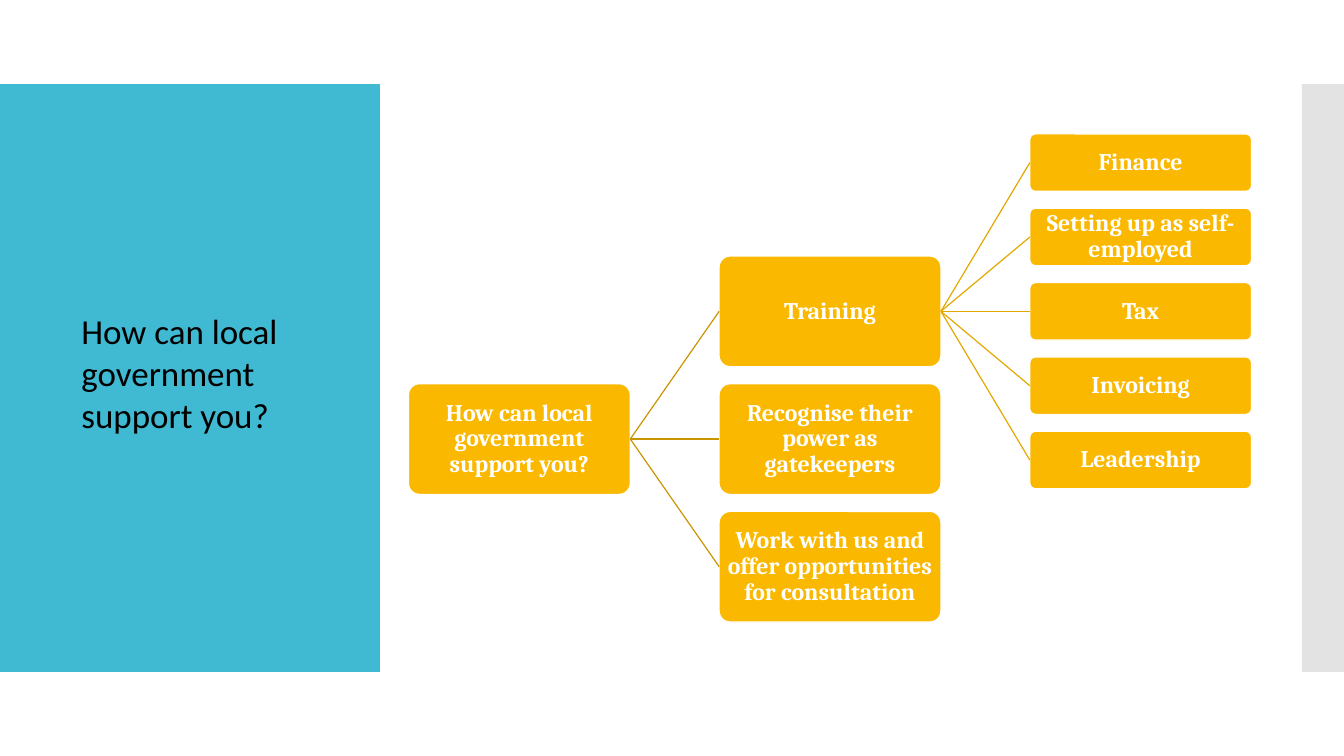
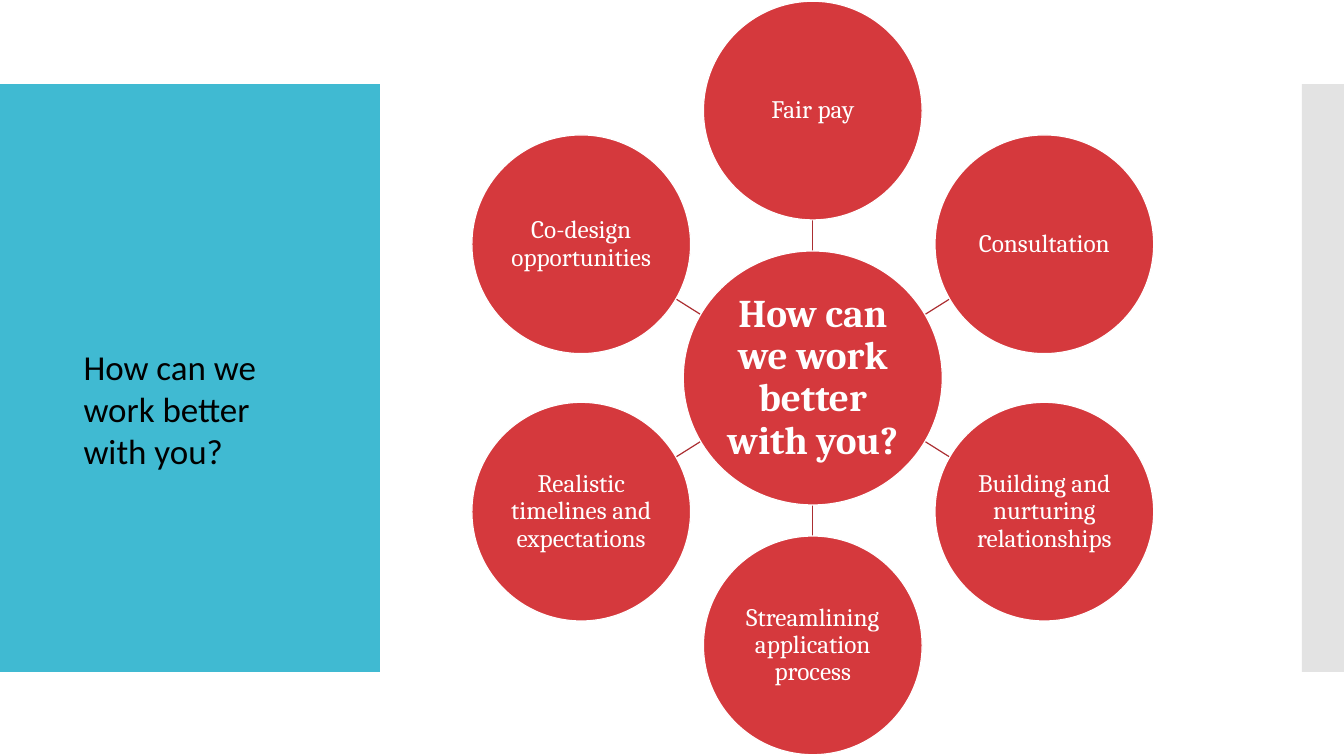
import math
import pptx
import pptx.util
import pptx.dml.color
import pptx.enum.shapes
import pptx.enum.text
import pptx.oxml
import pptx.oxml.ns

Pt = pptx.util.Pt
qn = pptx.oxml.ns.qn
SHAPE = pptx.enum.shapes.MSO_SHAPE
ALIGN = pptx.enum.text.PP_ALIGN
ANCHOR = pptx.enum.text.MSO_ANCHOR
STRAIGHT = pptx.enum.shapes.MSO_CONNECTOR.STRAIGHT

TEAL, GREY, WHITE, BLACK = "40BAD2", "C8C8C8", "FFFFFF", "000000"
GOLD, BROWN, AMBER = "FAB900", "C89400", "E3A800"
RED, WINE = "D5393D", "AB2E31"
EDGE = 0.85


def ink(fill, color):
    fill.solid()
    fill.fore_color.rgb = pptx.dml.color.RGBColor.from_string(color)


def write(frame, text, font="Cambria", size=18, color=WHITE, bold=False,
          align=ALIGN.CENTER, anchor=ANCHOR.MIDDLE, inset=(0.8, 0.8), space=0.9):
    frame.word_wrap = True
    frame.vertical_anchor = anchor
    frame.margin_left = frame.margin_right = Pt(inset[0])
    frame.margin_top = frame.margin_bottom = Pt(inset[1])
    par = frame.paragraphs[0]
    par.alignment = align
    par.line_spacing = space
    run = par.add_run()
    run.text = text
    run.font.name = font
    run.font.size = Pt(size)
    run.font.bold = bold
    ink(run.font.fill, color)


deck = pptx.Presentation()
deck.slide_width = Pt(960)
deck.slide_height = Pt(540)

titles = [
    ("How can local government support you?", 51.1, 217.4, 163.4),
    ("How can we work better with you?", 52.6, 243.4, 158.4),
]
pages = []
for text, left, top, width in titles:
    page = deck.slides.add_slide(deck.slide_layouts[6])
    pages.append(page)
    for x, w, color in [(0, 271.4, TEAL), (930, 30, GREY)]:
        band = page.shapes.add_shape(SHAPE.RECTANGLE, Pt(x), Pt(60), Pt(w), Pt(420))
        band.shadow.inherit = False
        band.line.fill.background()
        ink(band.fill, color)
        if color == GREY:
            tint = band.element.spPr.find(".//" + qn("a:srgbClr"))
            pptx.oxml.ns.qn
            tint.append(pptx.oxml.parse_xml(
                '<a:alpha xmlns:a="http://schemas.openxmlformats.org/drawingml/2006/main" val="50000"/>'))
    title = page.shapes.add_textbox(Pt(left), Pt(top), Pt(width), Pt(98))
    write(title.text_frame, text, font="Calibri", size=25, color=BLACK,
          align=ALIGN.LEFT, anchor=ANCHOR.TOP, inset=(7.2, 3.6), space=1)

tree, wheel = pages
lines = []

levels = [
    (["How can local government support you?"], 313.6, 0, 79),
    (["Training", "Recognise their power as gatekeepers",
      "Work with us and offer opportunities for consultation"], 313.6, 91.2, 79),
    (["Finance", "Setting up as self-employed", "Tax", "Invoicing", "Leadership"],
     222.4, 53.1, 41),
]
parent = None
for level, (texts, mid, step, high) in enumerate(levels):
    row = []
    for i, text in enumerate(texts):
        top = mid + (i - (len(texts) - 1) / 2) * step - high / 2
        box = tree.shapes.add_shape(SHAPE.ROUNDED_RECTANGLE, Pt(291.8 + level * 221.9),
                                    Pt(top), Pt(158.4), Pt(high))
        box.adjustments[0] = 0.1
        box.shadow.inherit = False
        ink(box.fill, GOLD)
        ink(box.line.fill, WHITE)
        box.line.width = Pt(EDGE)
        write(box.text_frame, text, size=17, bold=True)
        row.append(box)
        if parent:
            line = tree.shapes.add_connector(STRAIGHT, 0, 0, 0, 0)
            line.begin_connect(parent, 3)
            line.end_connect(box, 1)
            lines.append((line, BROWN if level == 1 else AMBER))
    parent = row[0]

cx, cy, reach, disc = 580.6, 270, 191, 156.2
hub = (185, 181.4)
discs = [("How can we work better with you?", cx, cy, *hub, 28, True)]
spokes = ["Fair pay", "Consultation", "Building and nurturing relationships",
          "Streamlining application process", "Realistic timelines and expectations",
          "Co-design opportunities"]
for i, text in enumerate(spokes):
    turn = math.tau * i / len(spokes)
    dx, dy = math.sin(turn), -math.cos(turn)
    discs.append((text, cx + reach * dx, cy + reach * dy, disc, disc, 18, False))
    far = reach - disc / 2
    line = wheel.shapes.add_connector(
        STRAIGHT, Pt(cx + hub[0] / 2 * dx), Pt(cy + hub[1] / 2 * dy),
        Pt(cx + far * dx), Pt(cy + far * dy))
    lines.append((line, WINE))

for text, x, y, w, h, size, bold in discs:
    ball = wheel.shapes.add_shape(SHAPE.OVAL, Pt(x - w / 2), Pt(y - h / 2), Pt(w), Pt(h))
    ball.shadow.inherit = False
    ink(ball.fill, RED)
    ink(ball.line.fill, WHITE)
    ball.line.width = Pt(EDGE)
    write(ball.text_frame, text, size=size, bold=bold)

for line, color in lines:
    ink(line.line.fill, color)
    line.line.width = Pt(EDGE)
    line.element.spPr.append(pptx.oxml.parse_xml(
        '<a:effectLst xmlns:a="http://schemas.openxmlformats.org/drawingml/2006/main"/>'))

deck.save("out.pptx")
